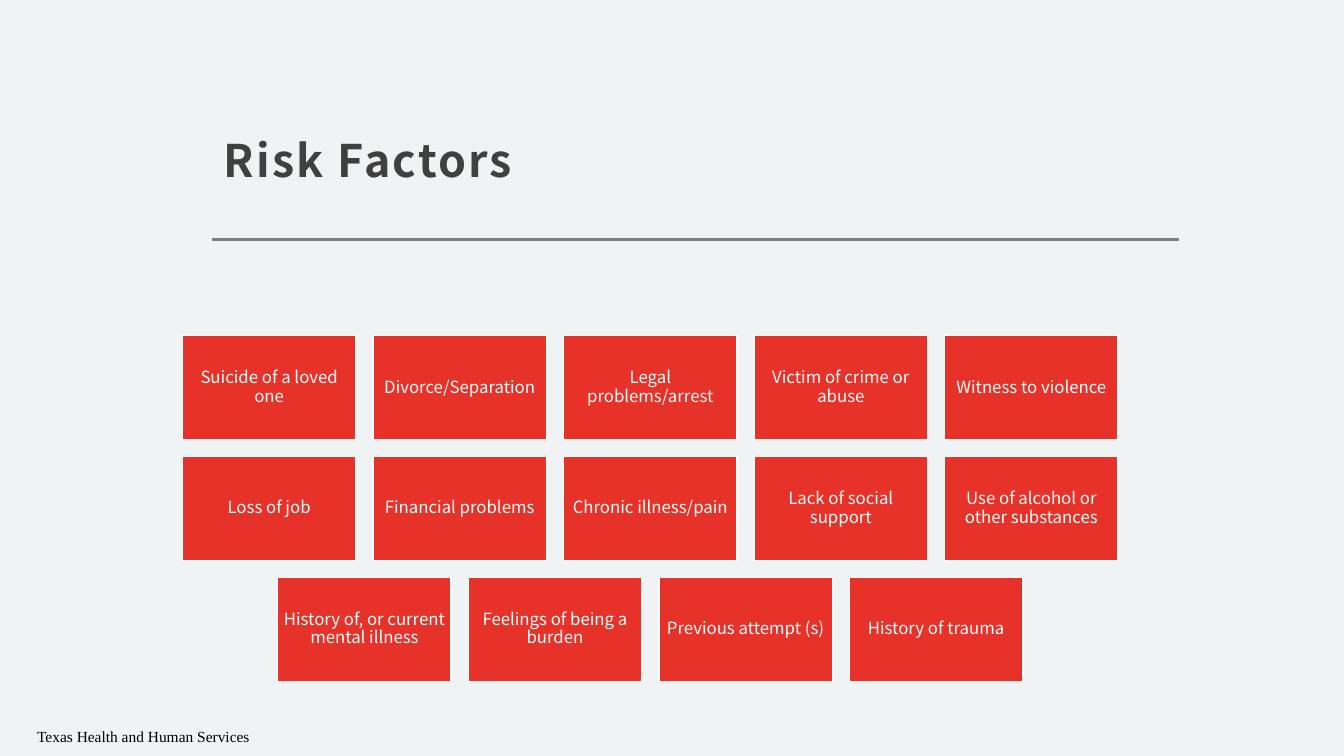
from dataclasses import dataclass

from lxml import etree
from pptx import Presentation
from pptx.dml.color import RGBColor
from pptx.enum import shapes, text
from pptx.oxml import ns
from pptx.util import Inches, Pt

COLORS = {
    "background": "F0F3F3",
    "title": "404040",
    "rule": "808080",
    "card": "E73229",
    "white": "FFFFFF",
    "footer": "000000",
}
SANS = "Noto Sans CJK JP"
SERIF = "Times New Roman"

CARD_W, CARD_H = 1.72, 1.03
PITCH_X, PITCH_Y = 1.89, 1.2
CENTER_X, TOP = 6.45, 3.33

ROWS = [
    [
        "Suicide of a loved one",
        "Divorce/Separation",
        "Legal problems/arrest",
        "Victim of crime or abuse",
        "Witness to violence",
    ],
    [
        "Loss of job",
        "Financial problems",
        "Chronic illness/pain",
        "Lack of social support",
        "Use of alcohol or other substances",
    ],
    [
        "History of, or current mental illness",
        "Feelings of being a burden",
        "Previous attempt (s)",
        "History of trauma",
    ],
]


@dataclass
class Card:
    label: str
    left: float
    top: float


def rgb(name: str) -> RGBColor:
    return RGBColor.from_string(COLORS[name])


def set_text(tf, content: str, *, size: float, color: str, font: str = SANS,
             bold: bool = False, align=text.PP_ALIGN.LEFT,
             anchor=text.MSO_ANCHOR.TOP, line_spacing: float = 1.0,
             char_spacing: float = 0, insets=(0.1, 0.05, 0.1, 0.05)) -> None:
    tf.word_wrap = True
    tf.auto_size = text.MSO_AUTO_SIZE.NONE
    tf.vertical_anchor = anchor
    tf.margin_left, tf.margin_top, tf.margin_right, tf.margin_bottom = map(Inches, insets)
    p = tf.paragraphs[0]
    p.alignment = align
    p.line_spacing = line_spacing
    r = p.add_run()
    r.text = content
    r.font.name = font
    r.font.size = Pt(size)
    r.font.bold = bold
    r.font.color.rgb = rgb(color)
    if char_spacing:
        r._r.get_or_add_rPr().set("spc", str(round(char_spacing * 100)))


def layout_cards() -> list[Card]:
    cards = []
    for row, labels in enumerate(ROWS):
        left = CENTER_X - ((len(labels) - 1) * PITCH_X + CARD_W) / 2
        for col, label in enumerate(labels):
            cards.append(Card(label, left + col * PITCH_X, TOP + row * PITCH_Y))
    return cards


def add_card(slide, card: Card) -> None:
    sp = slide.shapes.add_shape(
        shapes.MSO_SHAPE.RECTANGLE, Inches(card.left), Inches(card.top),
        Inches(CARD_W), Inches(CARD_H))
    sp.shadow.inherit = False
    sp.fill.solid()
    sp.fill.fore_color.rgb = rgb("card")
    sp.line.color.rgb = rgb("white")
    sp.line.width = Pt(1)
    set_text(sp.text_frame, card.label, size=12, color="white",
             align=text.PP_ALIGN.CENTER, anchor=text.MSO_ANCHOR.MIDDLE,
             line_spacing=0.9, insets=(0.05, 0.05, 0.05, 0.05))


def add_rule(slide) -> None:
    line = slide.shapes.add_connector(
        shapes.MSO_CONNECTOR.STRAIGHT, Inches(2.1), Inches(2.38), Inches(11.69), Inches(2.38))
    line.line.color.rgb = rgb("rule")
    line.line.width = Pt(2)
    etree.SubElement(line._element.spPr, ns.qn("a:effectLst"))


def add_title(slide) -> None:
    title = slide.shapes.title
    title.left, title.top, title.width, title.height = map(Inches, (2.1, 0.48, 9.59, 1.47))
    set_text(title.text_frame, "Risk Factors", size=32, color="title", bold=True,
             anchor=text.MSO_ANCHOR.BOTTOM, line_spacing=1.3, char_spacing=1.5,
             insets=(0.12, 0.12, 0.12, 0.1))


def add_footer(slide) -> None:
    box = slide.shapes.add_textbox(Inches(0.27), Inches(7.16), Inches(6.63), Inches(0.29))
    set_text(box.text_frame, "Texas Health and Human Services", size=11,
             color="footer", font=SERIF)


def main() -> None:
    prs = Presentation()
    prs.slide_width, prs.slide_height = Inches(13.33), Inches(7.5)
    slide = prs.slides.add_slide(prs.slide_layouts[5])
    slide.background.fill.solid()
    slide.background.fill.fore_color.rgb = rgb("background")
    add_rule(slide)
    add_title(slide)
    for card in layout_cards():
        add_card(slide, card)
    add_footer(slide)
    prs.save("out.pptx")


if __name__ == "__main__":
    main()
